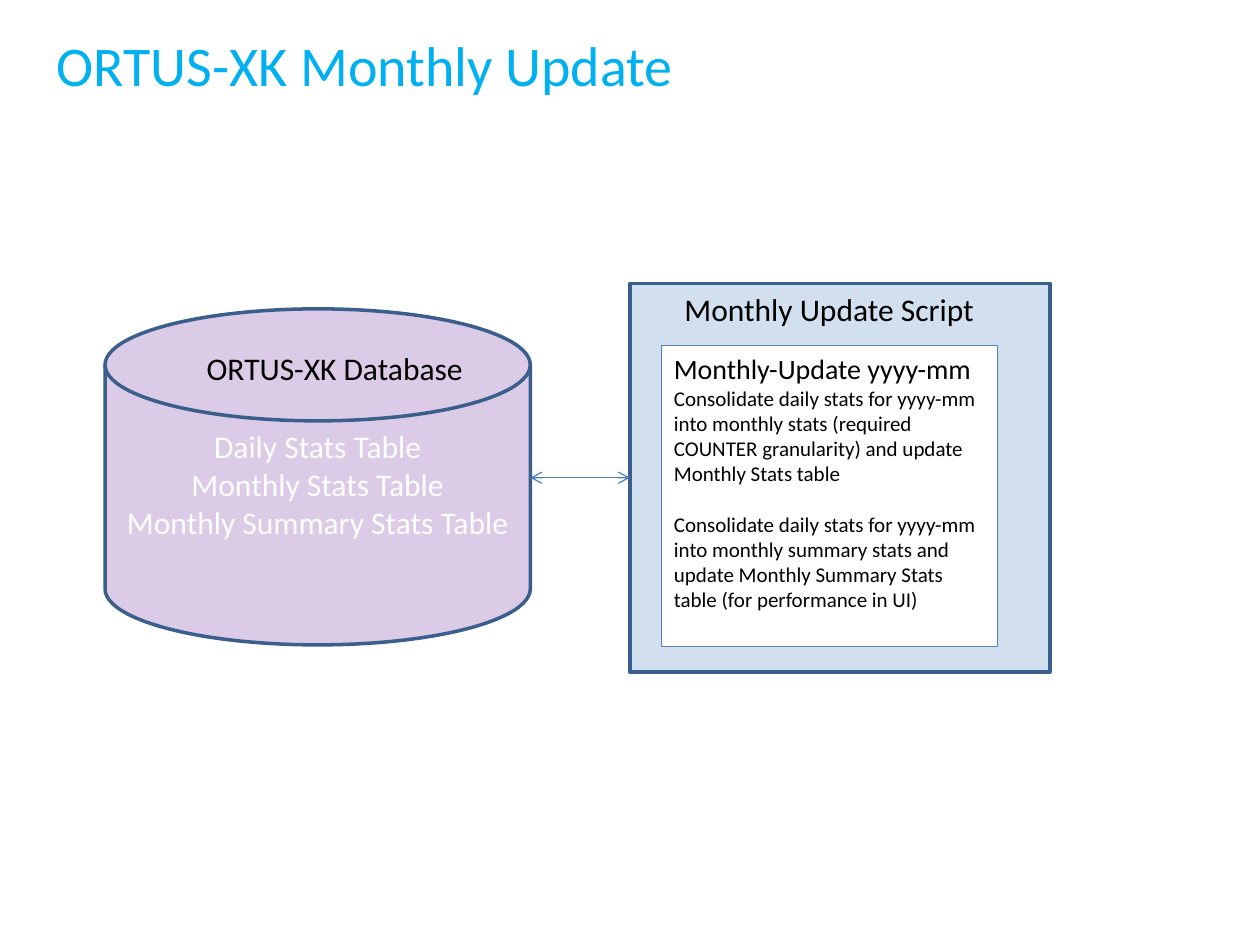
"""Build the monthly update slide: a database linked to its update script."""
import pptx
import pptx.dml.color
import pptx.enum.shapes
import pptx.enum.text
import pptx.oxml
import pptx.oxml.ns
import pptx.util
from lxml import etree

Pt = pptx.util.Pt
SHAPE = pptx.enum.shapes.MSO_SHAPE
ALIGN = pptx.enum.text.PP_ALIGN
FONT = "Calibri"


def rgb(value):
    """Return the colour for a hex string."""
    return pptx.dml.color.RGBColor.from_string(value)


def add_sub(parent, tag, **attrs):
    """Append a DrawingML child element with attributes."""
    return etree.SubElement(parent, pptx.oxml.ns.qn(tag), **attrs)


def write(s, lines, color, align=ALIGN.LEFT, margins=(7.2, 3.6), wrap=True):
    """Write lines of (text, size, space before) into a shape, from its top."""
    tf = s.text_frame
    tf.word_wrap = wrap
    tf.auto_size = pptx.enum.text.MSO_AUTO_SIZE.NONE
    tf.vertical_anchor = pptx.enum.text.MSO_ANCHOR.TOP
    tf.margin_left = tf.margin_right = Pt(margins[0])
    tf.margin_top = tf.margin_bottom = Pt(margins[1])
    for i, (text, size, before) in enumerate(lines):
        p = tf.add_paragraph() if i else tf.paragraphs[0]
        p.alignment = align
        if before:
            p.space_before = Pt(before)
        r = p.add_run()
        r.text = text
        r.font.name = FONT
        r.font.size = Pt(size)
        r.font.color.rgb = rgb(color)


def add_title(slide, text):
    """Place and format the slide title."""
    s = slide.shapes.title
    s.left, s.top, s.width, s.height = Pt(32.4), Pt(17.3), Pt(519), Pt(51)
    write(s, [(text, 32, 0)], "00B0F0", margins=(0, 0))


def add_box(slide, kind, box, fill, line, weight, opacity=100):
    """Add a filled and outlined preset shape."""
    s = slide.shapes.add_shape(kind, *map(Pt, box))
    s.shadow.inherit = False
    s.fill.solid()
    s.fill.fore_color.rgb = rgb(fill)
    if opacity < 100:
        color = s.fill._xPr.find(".//" + pptx.oxml.ns.qn("a:srgbClr"))
        add_sub(color, "a:alpha", val=str(opacity * 1000))
    s.line.color.rgb = rgb(line)
    s.line.width = Pt(weight)
    return s


def add_label(slide, box, text):
    """Add a one-line heading."""
    s = slide.shapes.add_textbox(*map(Pt, box))
    write(s, [(text, 18, 0)], "000000", wrap=False)


def add_double_arrow(slide, x1, x2, y):
    """Add a horizontal connector with an arrowhead at each end."""
    s = slide.shapes.add_connector(
        pptx.enum.shapes.MSO_CONNECTOR.STRAIGHT, Pt(x1), Pt(y), Pt(x2), Pt(y))
    s.line.color.rgb = rgb("4B7EBC")
    s.line.width = Pt(0.75)
    ln = s.line._get_or_add_ln()
    for tag in ("a:headEnd", "a:tailEnd"):
        add_sub(ln, tag, type="arrow")
    add_sub(s._element.spPr, "a:effectLst")


def main():
    """Build and save the slide."""
    prs = pptx.Presentation()
    prs.slide_width, prs.slide_height = Pt(720), Pt(540)
    slide = prs.slides.add_slide(prs.slide_layouts[5])
    add_title(slide, "ORTUS-XK Monthly Update")

    add_box(slide, SHAPE.RECTANGLE, (360, 162, 240, 222),
            "4F81BD", "3A5F8C", 2, opacity=25)
    steps = add_box(slide, SHAPE.RECTANGLE, (378, 197.5, 192, 172),
                    "FFFFFF", "4F81BD", 0.75)
    write(steps, [
        ("Monthly-Update yyyy-mm", 16, 0),
        ("Consolidate daily stats for yyyy-mm into monthly stats (required "
         "COUNTER granularity) and update Monthly Stats table", 12, 0),
        ("Consolidate daily stats for yyyy-mm into monthly summary stats and "
         "update Monthly Summary Stats table (for performance in UI)", 12, 14.4),
    ], "000000")

    database = add_box(slide, SHAPE.FLOWCHART_MAGNETIC_DISK, (60, 176.5, 243, 192),
                       "7030A0", "3A5F8C", 2, opacity=25)
    tables = ("Daily Stats Table", "Monthly Stats Table", "Monthly Summary Stats Table")
    write(database, [(name, 18, 0) for name in tables], "FFFFFF", ALIGN.CENTER)

    add_label(slide, (111, 196, 148, 29), "ORTUS-XK Database")
    add_label(slide, (384, 162, 182, 29), "Monthly Update Script")
    add_double_arrow(slide, 303, 360, 273)
    prs.save("out.pptx")


if __name__ == "__main__":
    main()
